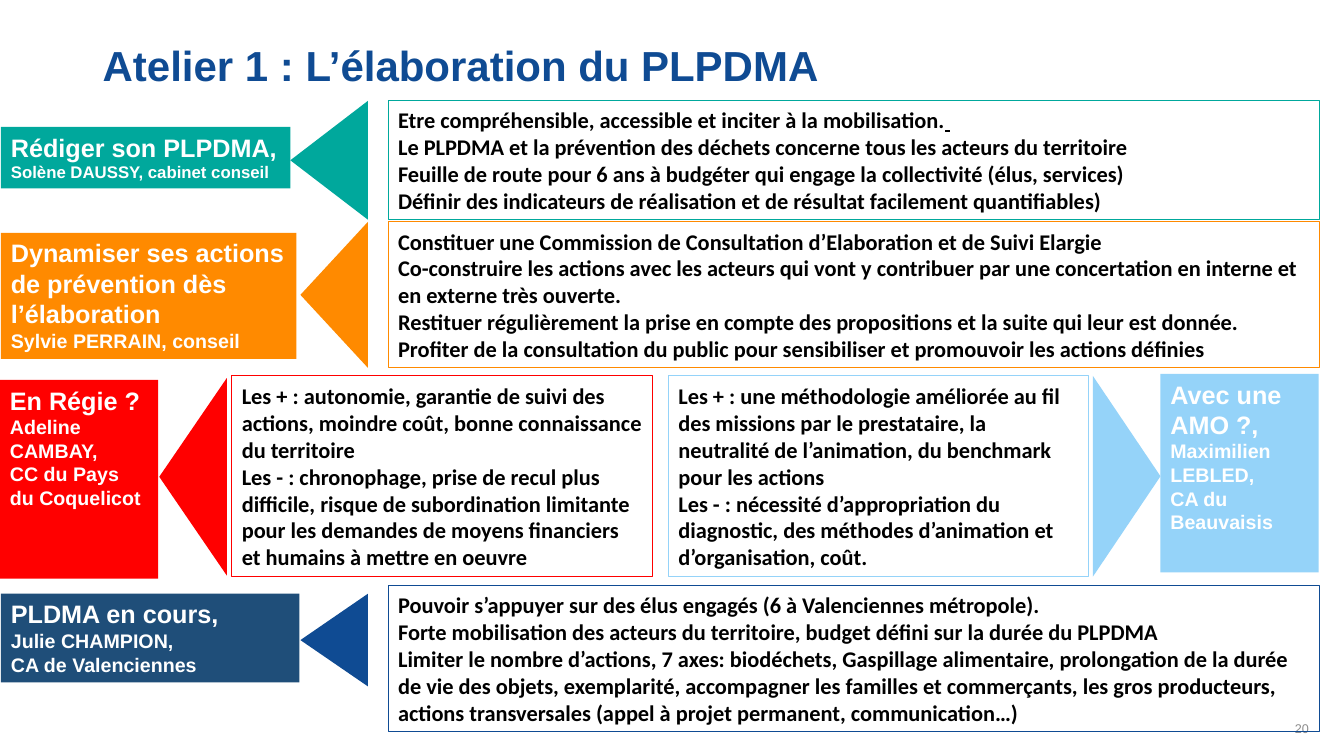
import pptx
import pptx.dml.color
import pptx.enum.shapes
import pptx.enum.text
import pptx.util

Inches = pptx.util.Inches
RGBColor = pptx.dml.color.RGBColor
Anchor = pptx.enum.text.MSO_ANCHOR
Align = pptx.enum.text.PP_ALIGN
Shape = pptx.enum.shapes.MSO_SHAPE

TEAL = RGBColor(0x00, 0xA8, 0x9C)
ORANGE = RGBColor(0xFF, 0x8A, 0x00)
RED = RGBColor(0xFF, 0x00, 0x00)
SKY = RGBColor(0x95, 0xD3, 0xF9)
NAVY = RGBColor(0x0F, 0x4B, 0x93)
STEEL = RGBColor(0x1F, 0x4E, 0x79)
WHITE = RGBColor(0xFF, 0xFF, 0xFF)
BLACK = RGBColor(0x00, 0x00, 0x00)
GREY = RGBColor(0x8C, 0x8C, 0x8C)

TITLE = "Atelier 1 : L’élaboration du PLPDMA"
PAGE_NUMBER = "20"

# Frames are left, top, width, height; label paragraphs list (text, size) runs.
TOPICS = [
    {
        "color": TEAL, "label_fill": TEAL, "label_frame": (0.01, 1.26, 2.87, 0.61),
        "label": [[("Rédiger son PLPDMA,", 18)],
                  [("Solène DAUSSY, cabinet conseil", 12)]],
        "arrow_frame": (2.88, 1, 0.77, 1.18), "arrow_turn": 270,
        "points_frame": (3.85, 1, 9.24, 1.18),
        "points": [
            "Etre compréhensible, accessible et inciter à la mobilisation.",
            "Le PLPDMA et la prévention des déchets concerne tous les acteurs du territoire",
            "Feuille de route pour 6 ans à budgéter qui engage la collectivité (élus, services)",
            "Définir des indicateurs de réalisation et de résultat facilement quantifiables)",
        ],
        "underlined_end": True,
    },
    {
        "color": ORANGE, "label_fill": ORANGE, "label_frame": (0.01, 2.31, 2.93, 1.25),
        "label": [[("Dynamiser ses actions de prévention dès l’élaboration", 18)],
                  [("Sylvie PERRAIN, conseil", 14)]],
        "arrow_frame": (2.98, 2.2, 0.67, 1.45), "arrow_turn": 270,
        "points_frame": (3.85, 2.2, 9.24, 1.45),
        "points": [
            "Constituer une Commission de Consultation d’Elaboration et de Suivi Elargie",
            "Co-construire les actions avec les acteurs qui vont y contribuer par une "
            "concertation en interne et en externe très ouverte.",
            "Restituer régulièrement la prise en compte des propositions et la suite qui "
            "leur est donnée.",
            "Profiter de la consultation du public pour sensibiliser et promouvoir les "
            "actions définies",
        ],
    },
    {
        "color": RED, "label_fill": RED, "label_frame": (0, 3.77, 1.57, 1.97),
        "label": [[("En Régie ?", 18)], [("Adeline CAMBAY,", 14)],
                  [("CC du Pays du Coquelicot", 14)]],
        "arrow_frame": (1.58, 3.75, 0.67, 1.96), "arrow_turn": 270,
        "points_frame": (2.3, 3.73, 4.17, 1.99),
        "points": [
            "Les + : autonomie, garantie de suivi des actions, moindre coût, bonne "
            "connaissance du territoire",
            "Les - : chronophage, prise de recul plus difficile, risque de subordination "
            "limitante pour les demandes de moyens financiers et humains à mettre en oeuvre",
        ],
    },
    {
        "color": SKY, "label_fill": SKY, "label_frame": (11.51, 3.71, 1.57, 1.97),
        "label": [[("Avec une AMO ?, ", 18), ("Maximilien LEBLED,", 14)],
                  [("CA du Beauvaisis", 14)]],
        "arrow_frame": (10.84, 3.73, 0.67, 1.99), "arrow_turn": 90,
        "points_frame": (6.63, 3.73, 4.17, 1.99),
        "points": [
            "Les + : une méthodologie améliorée au fil des missions par le prestataire, la "
            "neutralité de l’animation, du benchmark pour les actions",
            "Les - : nécessité d’appropriation du diagnostic, des méthodes d’animation et "
            "d’organisation, coût.",
        ],
    },
    {
        "color": NAVY, "label_fill": STEEL, "label_frame": (0.01, 5.89, 2.96, 0.88),
        "label": [[("PLDMA en cours,", 18)], [("Julie CHAMPION,", 14)],
                  [("CA de Valenciennes", 14)]],
        "arrow_frame": (2.98, 5.89, 0.67, 0.92), "arrow_turn": 270,
        "points_frame": (3.85, 5.81, 9.24, 1.45),
        "points": [
            "Pouvoir s’appuyer sur des élus engagés (6 à Valenciennes métropole).",
            "Forte mobilisation des acteurs du territoire, budget défini sur la durée du PLPDMA",
            "Limiter le nombre d’actions, 7 axes: biodéchets, Gaspillage alimentaire, "
            "prolongation de la durée de vie des objets, exemplarité, accompagner les "
            "familles et commerçants, les gros producteurs, actions transversales (appel à "
            "projet permanent, communication…)",
        ],
    },
]


def add_span(para, text, size, color, font="Arial", bold=True):
    span = para.add_run()
    span.text = text
    span.font.name = font
    span.font.size = pptx.util.Pt(size)
    span.font.bold = bold
    span.font.color.rgb = color
    return span


def add_paragraphs(box, count, anchor=Anchor.TOP, align=Align.LEFT):
    """Prepare the text frame and return its aligned, empty paragraphs."""
    frame = box.text_frame
    frame.word_wrap = True
    frame.vertical_anchor = anchor
    paras = [frame.paragraphs[0]] + [frame.add_paragraph() for _ in range(count - 1)]
    for para in paras:
        para.alignment = align
    return paras


def add_panel(slide, kind, frame, fill=None, line=None):
    panel = slide.shapes.add_shape(kind, *map(Inches, frame))
    panel.shadow.inherit = False
    if fill is None:
        panel.fill.background()
    else:
        panel.fill.solid()
        panel.fill.fore_color.rgb = fill
    if line is None:
        panel.line.fill.background()
    else:
        panel.line.color.rgb = line
        panel.line.width = pptx.util.Pt(0.75)
    return panel


def add_arrow(slide, frame, turn, color):
    """Add a triangle that fills the frame once turned a quarter."""
    left, top, width, height = frame
    shift = (width - height) / 2
    unturned = (left + shift, top - shift, height, width)
    add_panel(slide, Shape.ISOSCELES_TRIANGLE, unturned, fill=color).rotation = turn


def add_topic(slide, topic):
    label = add_panel(slide, Shape.RECTANGLE, topic["label_frame"], fill=topic["label_fill"])
    for para, runs in zip(add_paragraphs(label, len(topic["label"])), topic["label"]):
        for text, size in runs:
            add_span(para, text, size, WHITE)

    add_arrow(slide, topic["arrow_frame"], topic["arrow_turn"], topic["color"])

    box = add_panel(slide, Shape.RECTANGLE, topic["points_frame"], line=topic["color"])
    paras = add_paragraphs(box, len(topic["points"]), Anchor.MIDDLE)
    for para, text in zip(paras, topic["points"]):
        add_span(para, text, 16, BLACK, "Calibri")
    if topic.get("underlined_end"):
        add_span(paras[0], " ", 16, BLACK, "Calibri").font.underline = True


def main():
    deck = pptx.Presentation()
    deck.slide_width, deck.slide_height = Inches(13.33), Inches(7.5)
    slide = deck.slides.add_slide(deck.slide_layouts[6])

    title = slide.shapes.add_textbox(*map(Inches, (0.92, 0.4, 11.5, 1)))
    title_para = add_paragraphs(title, 1)[0]
    title_para.line_spacing = 0.9
    add_span(title_para, TITLE, 30, NAVY)

    number = slide.shapes.add_textbox(*map(Inches, (10.08, 7.1, 3, 0.25)))
    number_para = add_paragraphs(number, 1, Anchor.BOTTOM, Align.RIGHT)[0]
    add_span(number_para, PAGE_NUMBER, 9, GREY, bold=False)

    for topic in TOPICS:
        add_topic(slide, topic)
    deck.save("out.pptx")


if __name__ == "__main__":
    main()
